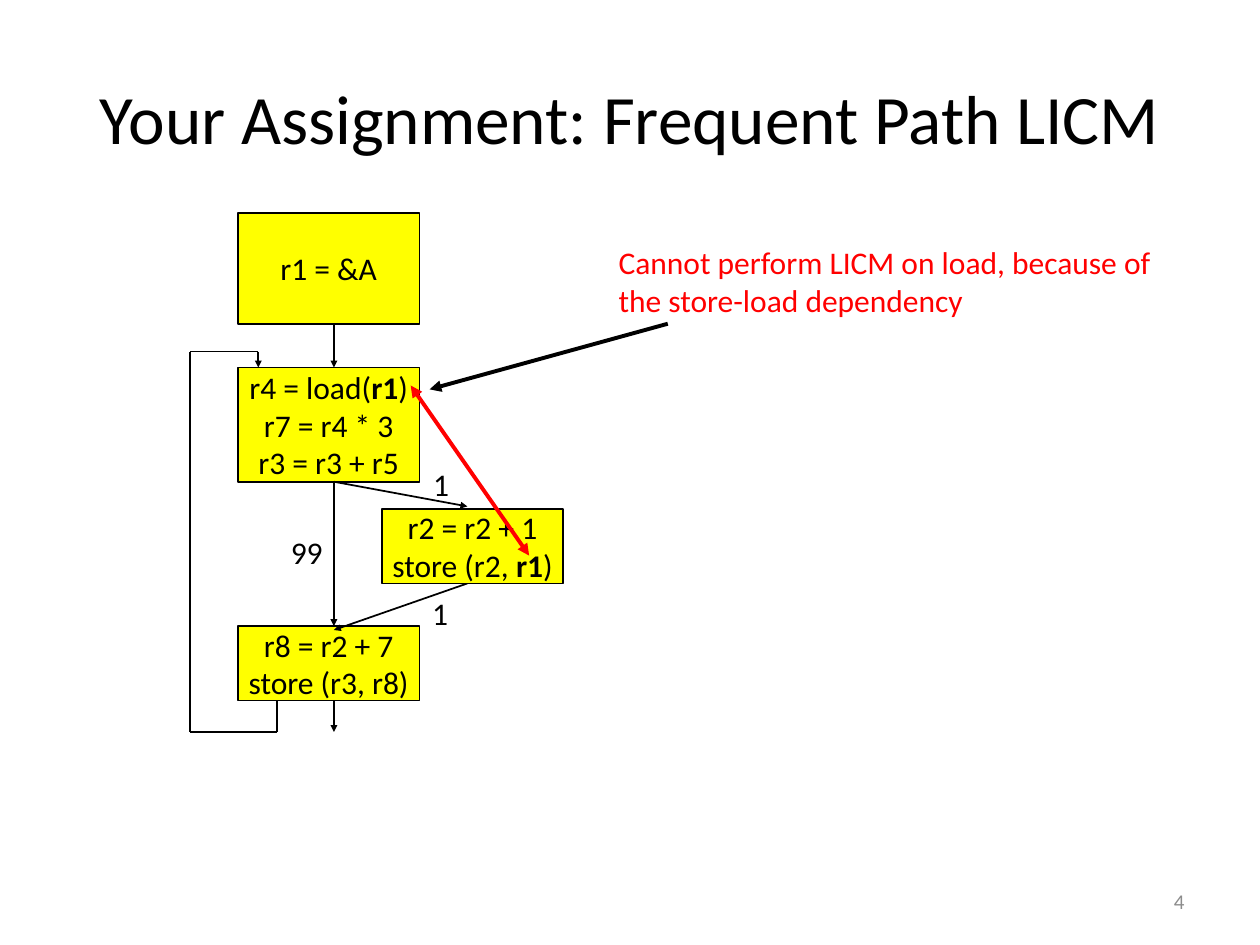
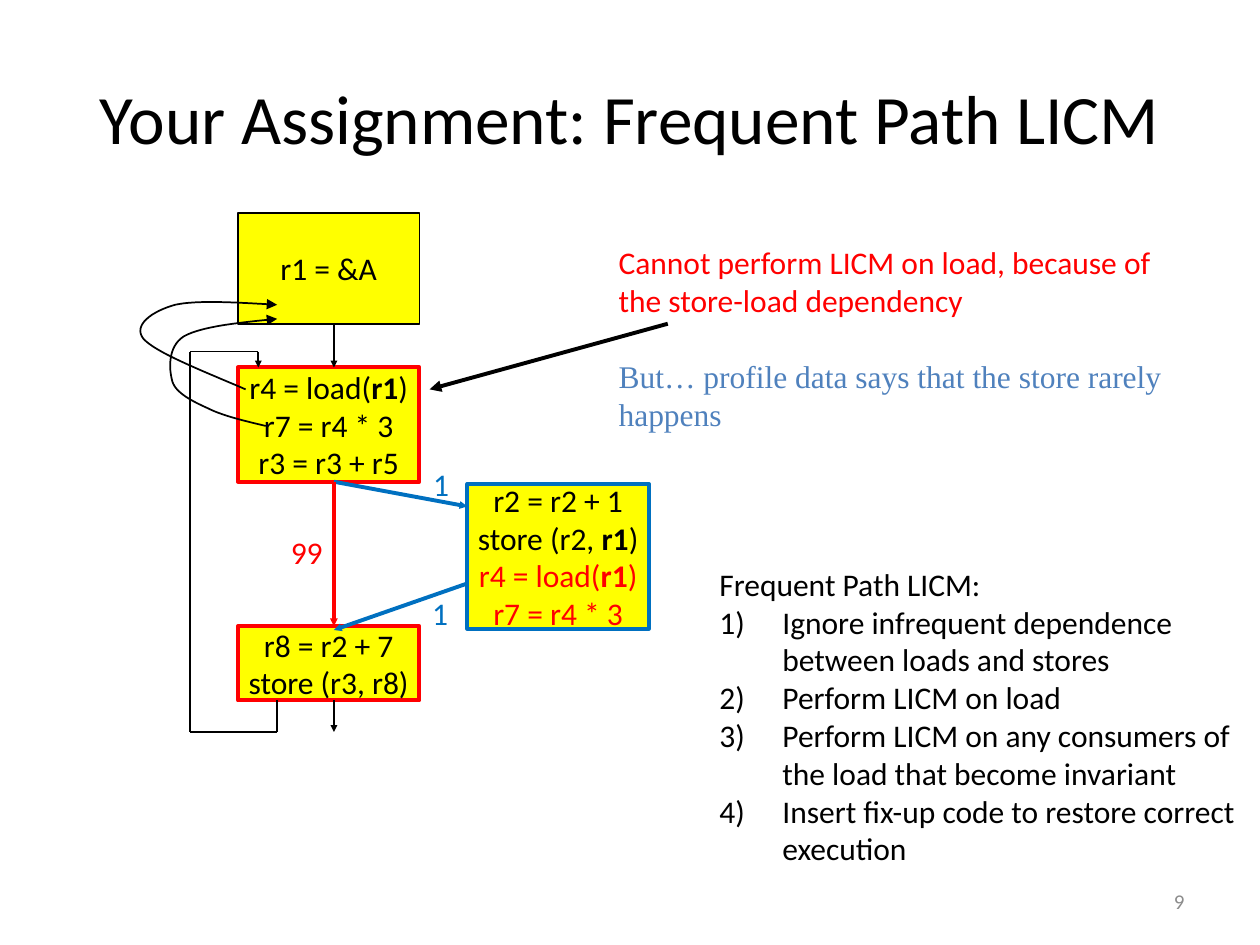
"""Build two slides that explain frequent path loop-invariant code motion."""
from dataclasses import dataclass
from itertools import pairwise

from lxml import etree
from pptx import Presentation
from pptx.dml.color import RGBColor
from pptx.enum.shapes import MSO_CONNECTOR, MSO_SHAPE
from pptx.enum.text import MSO_ANCHOR, MSO_AUTO_SIZE, PP_ALIGN
from pptx.oxml.ns import qn
from pptx.util import Pt

STRAIGHT = MSO_CONNECTOR.STRAIGHT
RECTANGLE = MSO_SHAPE.RECTANGLE
MIDDLE, TOP = MSO_ANCHOR.MIDDLE, MSO_ANCHOR.TOP
LEFT, CENTER, RIGHT = PP_ALIGN.LEFT, PP_ALIGN.CENTER, PP_ALIGN.RIGHT
NO_AUTOFIT = MSO_AUTO_SIZE.NONE


@dataclass(frozen=True)
class Theme:
    """Colours, fonts, type sizes and line widths of the deck."""
    black: str = "000000"
    red: str = "FF0000"
    blue: str = "0070C0"
    soft_blue: str = "4F81BD"
    yellow: str = "FFFF00"
    grey: str = "8C8C8C"
    font: str = "Calibri"
    serif: str = "Times New Roman"
    title: float = 39.6
    body: float = 18
    number: float = 12
    thin: float = 1
    thick: float = 2.25


THEME = Theme()
TITLE = "Your Assignment: Frequent Path LICM"
TITLE_ONLY, TITLE_AND_CONTENT = 5, 1
TIGHT = (6.5, 3)
ROOMY = (7.2, 3.6)

BLOCK_LEFT, BLOCK_WIDTH = 136, 103.7
FLOW_X = 190.8
ENTRY_TOP, ENTRY_BOTTOM = 121.7, 185
LOOP_TOP, LOOP_BOTTOM = 210, 275.3
TAIL_TOP, TAIL_BOTTOM = 357.8, 400.3
EXIT_Y = 418.3
RARE_X = 267.1
LOOP_BACK = [(158.4, TAIL_BOTTOM), (158.4, EXIT_Y), (108.7, EXIT_Y),
             (108.7, 200.9), (147.6, 200.9), (147.6, LOOP_TOP)]

ENTRY_CODE = [["r1 = &A"]]
LOAD = ["r4 = load(", "r1", ")"]
USE = ["r7 = r4 * 3"]
LOOP_CODE = [LOAD, USE, ["r3 = r3 + r5"]]
RARE_CODE = [["r2 = r2 + 1"], ["store (r2, ", "r1", ")"]]
TAIL_CODE = [["r8 = r2 + 7"], ["store (r3, r8)"]]

HOIST_LOAD = [(140.4, 222.5), (115.2, 211.7), (89.3, 201.6), (82.1, 193.7),
              (75.6, 185.8), (87.1, 177.8), (100.1, 174.2),
              (112.3, 171.4), (135.4, 172.8), (158.4, 174.2)]
HOIST_USE = [(151.9, 243.4), (139.7, 240.5), (127.4, 237.6), (118.8, 233.3),
             (109.4, 229), (100.8, 224.6), (98.6, 218.2),
             (96.5, 211), (95.8, 198), (105.1, 192.2),
             (115.2, 186.5), (136.8, 184.3), (158.4, 182.2)]

STEPS = ["Ignore infrequent dependence between loads and stores",
         "Perform LICM on load",
         "Perform LICM on any consumers of the load that become invariant",
         "Insert fix-up code to restore correct execution"]


def rgb(color):
    """Turn a hex string into a colour."""
    return RGBColor.from_string(color)


def place(sp, left, top, width, height):
    """Move and size a shape."""
    sp.left, sp.top, sp.width, sp.height = map(Pt, (left, top, width, height))


def style_run(r, color=THEME.black, size=THEME.body, font=THEME.font, bold=False):
    """Format one run."""
    r.font.name, r.font.size, r.font.bold = font, Pt(size), bold
    r.font.color.rgb = rgb(color)


def style_frame(tf, inset, anchor, wrap):
    """Set the insets, anchor and wrapping of a text frame."""
    tf.margin_left = tf.margin_right = Pt(inset[0])
    tf.margin_top = tf.margin_bottom = Pt(inset[1])
    tf.vertical_anchor, tf.word_wrap, tf.auto_size = anchor, wrap, NO_AUTOFIT


def style_line(sp, color, width, ends=(), size="med"):
    """Set a line's colour and width and put triangles on the given ends."""
    sp.line.color.rgb = rgb(color)
    sp.line.width = Pt(width)
    ln = sp.line._get_or_add_ln()
    for end in ends:
        etree.SubElement(ln, qn(f"a:{end}"), type="triangle", w=size, len=size)


def add_title(slide):
    """Fill the title placeholder."""
    sp = slide.shapes.title
    place(sp, 36, 21.6, 648, 90)
    tf = sp.text_frame
    tf.text = TITLE
    style_frame(tf, ROOMY, MIDDLE, True)
    p = tf.paragraphs[0]
    p.alignment = CENTER
    style_run(p.runs[0], size=THEME.title)


def add_text(slide, text, box, inset=ROOMY, anchor=TOP, wrap=True, align=LEFT, **font):
    """Add a text box with one formatted paragraph."""
    tf = slide.shapes.add_textbox(*map(Pt, box)).text_frame
    tf.text = text
    style_frame(tf, inset, anchor, wrap)
    p = tf.paragraphs[0]
    p.alignment = align
    style_run(p.runs[0], **font)


def add_block(slide, code, left, top, height, color=THEME.black, width=THEME.thin,
              fixup=()):
    """Add a basic block; every second run of a line is bold, fix-up lines are red."""
    box = map(Pt, (left, top, BLOCK_WIDTH, height))
    sp = slide.shapes.add_shape(RECTANGLE, *box)
    sp.shadow.inherit = False
    sp.fill.solid()
    sp.fill.fore_color.rgb = rgb(THEME.yellow)
    style_line(sp, color, width)
    tf = sp.text_frame
    style_frame(tf, TIGHT, MIDDLE, False)
    lines = [(line, THEME.black) for line in code]
    lines += [(line, THEME.red) for line in fixup]
    for i, (line, ink) in enumerate(lines):
        p = tf.add_paragraph() if i else tf.paragraphs[0]
        p.alignment = CENTER
        for j, text in enumerate(line):
            r = p.add_run()
            r.text = text
            style_run(r, ink, bold=j % 2 == 1)


def add_line(slide, start, end, color=THEME.black, width=THEME.thin,
             ends=("tailEnd",), size="sm"):
    """Add a straight line or arrow between two points."""
    sp = slide.shapes.add_connector(STRAIGHT, *map(Pt, (*start, *end)))
    style_line(sp, color, width, ends, size)
    etree.SubElement(sp._element.spPr, qn("a:effectLst"))


def bezier(a, b, c, d, steps=16):
    """Return points along one cubic curve, without its start."""
    points = []
    for i in range(1, steps + 1):
        t = i / steps
        u = 1 - t
        weights = (u ** 3, 3 * u * u * t, 3 * u * t * t, t ** 3)
        points.append(tuple(Pt(sum(w * q[k] for w, q in zip(weights, (a, b, c, d))))
                            for k in (0, 1)))
    return points


def add_curve(slide, knots):
    """Add a curved arrow through chained cubic control points."""
    builder = slide.shapes.build_freeform(*map(Pt, knots[0]))
    for i in range(0, len(knots) - 1, 3):
        builder.add_line_segments(bezier(*knots[i:i + 4]), close=False)
    sp = builder.convert_to_shape()
    sp.shadow.inherit = False
    sp.fill.background()
    style_line(sp, THEME.black, THEME.thin, ("tailEnd",))


def add_steps(slide):
    """Fill the body placeholder with a heading and numbered steps."""
    sp = slide.placeholders[1]
    place(sp, 404.6, 319.7, 315.4, 203)
    tf = sp.text_frame
    tf.text = "\n".join(["Frequent Path LICM:", *STEPS])
    style_frame(tf, TIGHT, TOP, True)
    for i, p in enumerate(tf.paragraphs):
        p.space_before = Pt(0)
        pPr = p._p.get_or_add_pPr()
        pPr.set("marL", str(Pt(36)))
        pPr.set("indent", str(Pt(-36)))
        if i:
            etree.SubElement(pPr, qn("a:buFont"), typeface=THEME.font)
            etree.SubElement(pPr, qn("a:buAutoNum"), type="arabicParenR")
        else:
            etree.SubElement(pPr, qn("a:buNone"))
        style_run(p.runs[0])


def add_flow(slide, hot, rare, width):
    """Add the blocks, edges and weights of the graph both slides share."""
    hot_line = {"color": hot, "width": width}
    rare_line = {"color": rare, "width": width}
    add_block(slide, ENTRY_CODE, BLOCK_LEFT, ENTRY_TOP, ENTRY_BOTTOM - ENTRY_TOP)
    add_block(slide, LOOP_CODE, BLOCK_LEFT, LOOP_TOP, LOOP_BOTTOM - LOOP_TOP, **hot_line)
    add_block(slide, TAIL_CODE, BLOCK_LEFT, TAIL_TOP, TAIL_BOTTOM - TAIL_TOP, **hot_line)
    add_line(slide, (FLOW_X, ENTRY_BOTTOM), (FLOW_X, LOOP_TOP))
    add_line(slide, (FLOW_X, LOOP_BOTTOM), (RARE_X, 289.4), **rare_line)
    add_line(slide, (RARE_X, 333.4), (FLOW_X, 360), **rare_line)
    add_line(slide, (FLOW_X, LOOP_BOTTOM), (FLOW_X, TAIL_TOP), **hot_line)
    add_line(slide, (FLOW_X, TAIL_BOTTOM), (FLOW_X, EXIT_Y))
    for start, end in pairwise(LOOP_BACK):
        ends = ("tailEnd",) if end == LOOP_BACK[-1] else ()
        add_line(slide, start, end, ends=ends)
    for text, left, top, width, color in (("1", 240.5, 262.1, 23.8, rare),
                                          ("1", 239.8, 336.2, 23.8, rare),
                                          ("99", 159.1, 301, 33.1, hot)):
        add_text(slide, text, (left, top, width, 28.8), wrap=False, color=color)


def add_slide(prs, layout, number, hot, rare, width):
    """Add a slide with the title, page number, graph and problem note."""
    slide = prs.slides.add_slide(prs.slide_layouts[layout])
    add_title(slide)
    add_flow(slide, hot, rare, width)
    add_text(slide, "Cannot perform LICM on load, because of the store-load dependency",
             (347, 136.1, 338.4, 50.4), TIGHT, color=THEME.red)
    add_line(slide, (381.6, 185), (245.5, 222.5), width=THEME.thick, size="med")
    add_text(slide, str(number), (516.2, 500.4, 167.8, 28.8), anchor=MIDDLE,
             align=RIGHT, color=THEME.grey, size=THEME.number)
    return slide


def add_problem_slide(prs):
    """Show the dependency that blocks the motion."""
    slide = add_slide(prs, TITLE_ONLY, 4, THEME.black, THEME.black, THEME.thin)
    add_block(slide, RARE_CODE, 218.2, 290.9, 42.5)
    add_line(slide, (234.7, 220.3), (302.4, 317.5), THEME.red, THEME.thick,
             ("headEnd", "tailEnd"), "med")


def add_solution_slide(prs):
    """Show the hoisted code, the fix-up block and the steps."""
    slide = add_slide(prs, TITLE_AND_CONTENT, 9, THEME.red, THEME.blue, THEME.thick)
    add_block(slide, RARE_CODE, RARE_X, 276.5, 82.8, THEME.blue, THEME.thick,
              fixup=[LOAD, USE])
    add_text(slide, "But… profile data says that the store rarely happens",
             (347, 200.9, 327.6, 50.4), TIGHT, color=THEME.soft_blue, font=THEME.serif)
    add_curve(slide, HOIST_LOAD)
    add_curve(slide, HOIST_USE)
    add_steps(slide)


def main():
    """Build and save the deck."""
    prs = Presentation()
    prs.slide_width, prs.slide_height = Pt(720), Pt(540)
    add_problem_slide(prs)
    add_solution_slide(prs)
    prs.save("out.pptx")


if __name__ == "__main__":
    main()
